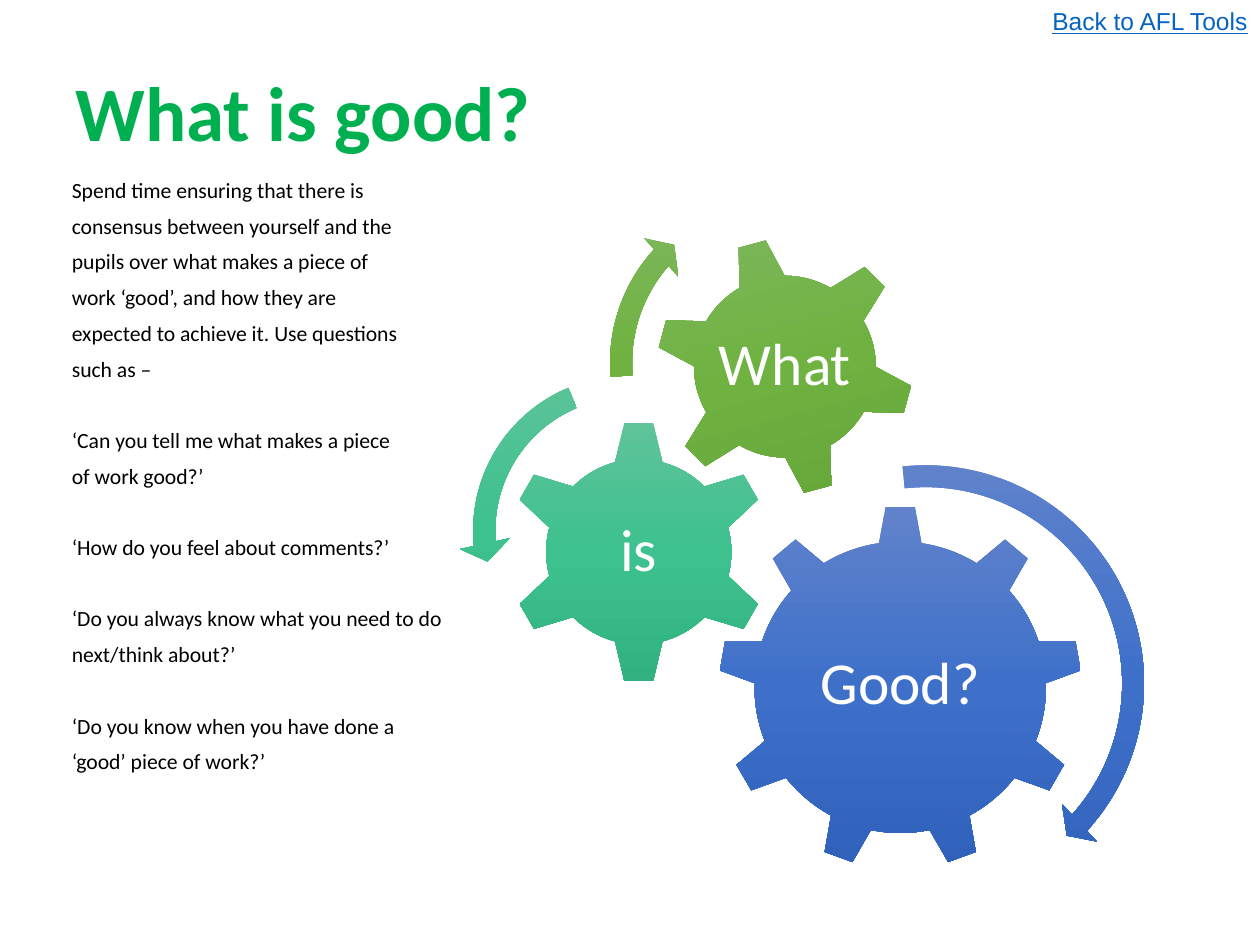
from copy import deepcopy
from pptx import Presentation
from pptx import util as u
from pptx.dml.color import RGBColor
from pptx.enum import shapes, text

HUES = {
    "title": "00B050", "body": "000000", "link": "0563C1", "label": "FFFFFF",
    "blue": ("6183CB", "3E70CA", "3062BB"),
    "teal": ("60C39A", "3DC18F", "31B080"),
    "green": ("81B861", "6FB242", "62A336"),
}
KIND = shapes.MSO_SHAPE
ALIGN = text.PP_ALIGN
NOTES = (
    ("Spend time ensuring that there is", "consensus between yourself and the",
     "pupils over what makes a piece of", "work ‘good’, and how they are",
     "expected to achieve it. Use questions", "such as –"),
    ("‘Can you tell me what makes a piece", "of work good?’"),
    ("‘How do you feel about comments?’",),
    ("‘Do you always know what you need to do", "next/think about?’"),
    ("‘Do you know when you have done a", "‘good’ piece of work?’"),
)
GEARS = (
    ("Good?", KIND.GEAR_9, "blue", (5.7, 4.01, 2.89, 2.89), 0, (0.2, 0.24, 0.6, 0.51),
     KIND.CIRCULAR_ARROW, (-0.07, -0.15, 1.28, 1.28), (0.047, 2.99, 25.29, 158.34, 0.055)),
    ("is", KIND.GEAR_6, "teal", (4.02, 3.33, 2.1, 2.1), 0, (0.25, 0.25, 0.5, 0.5),
     KIND.LEFT_CIRCULAR_ARROW, (-0.18, -0.22, 1.28, 1.28), (0.065, 4.3, 104.89, 148.38, 0.075)),
    ("What", KIND.GEAR_6, "green", (5.2, 1.88, 2.06, 2.06), 345, (0.22, 0.22, 0.56, 0.56),
     KIND.CIRCULAR_ARROW, (-0.23, -0.22, 1.41, 1.41), (0.06, 3.94, 133.14, 105.08, 0.07)),
)


def inner(box, share):
    """Return the part of a box given by shares of its size."""
    x, y, w, h = box
    a, b, c, d = share
    return x + a * w, y + b * h, c * w, d * h


def inch(box):
    """Turn a box in inches into lengths."""
    return [u.Inches(v) for v in box]


def style(para, size, hue, face="Calibri", align=ALIGN.LEFT):
    """Format a paragraph and its runs."""
    para.alignment = align
    for run in para.runs:
        run.font.size = u.Pt(size)
        run.font.name = face
        run.font.color.rgb = RGBColor.from_string(HUES[hue])


def seat(holder, box):
    """Move a placeholder to a box and stop it resizing."""
    holder.left, holder.top, holder.width, holder.height = inch(box)
    holder.text_frame.auto_size = text.MSO_AUTO_SIZE.NONE
    holder.text_frame.word_wrap = True


def head(slide, box):
    """Fill the title."""
    title = slide.shapes.title
    seat(title, box)
    title.text_frame.text = "What is good?"
    title.text_frame.vertical_anchor = text.MSO_ANCHOR.MIDDLE
    para = title.text_frame.paragraphs[0]
    para.line_spacing = 0.9
    style(para, 44, "title")
    para.runs[0].font.bold = True


def body(slide, box):
    """Fill the body with groups of lines set apart by spacing."""
    holder = slide.placeholders[1]
    seat(holder, box)
    frame = holder.text_frame
    frame.text = "\n".join(line for group in NOTES for line in group)
    starts = {group[0] for group in NOTES[1:]}
    for para in frame.paragraphs:
        para.line_spacing = 0.7
        para.space_before = u.Pt(30.4 if para.text in starts else 10)
        style(para, 12.4, "body")
        props = para._p.get_or_add_pPr()
        props.set("marL", str(u.Inches(0.25)))
        props.set("indent", str(u.Inches(-0.25)))
        props.insert_element_before(
            props.makeelement("{http://schemas.openxmlformats.org/drawingml/2006/main}buNone", {}),
            "a:tabLst", "a:defRPr", "a:extLst")


def back(slide, box):
    """Add the underlined line in the top corner."""
    frame = slide.shapes.add_textbox(*inch(box)).text_frame
    frame.word_wrap = True
    frame.text = "Back to AFL Tools"
    para = frame.paragraphs[0]
    style(para, 14, "link", "Arial", ALIGN.RIGHT)
    para.runs[0].font.underline = True


def solid(slide, kind, box, hue):
    """Add a shape shaded downwards in three tones."""
    shape = slide.shapes.add_shape(kind, *inch(box))
    shape.shadow.inherit = False
    shape.line.fill.background()
    shape.fill.gradient()
    shape.fill.gradient_angle = 270
    last = shape._element.spPr.xpath(".//a:gs")[-1]
    last.addprevious(deepcopy(last))
    for stop, tone, spot in zip(shape.fill.gradient_stops, HUES[hue], (0, 0.5, 1)):
        stop.color.rgb = RGBColor.from_string(tone)
        stop.position = spot
    return shape


def gear(slide, box, word, kind, hue, turn, label, arrow, sweep, bends):
    """Add a gear with its word and the arrow around it."""
    solid(slide, kind, box, hue).rotation = turn
    frame = slide.shapes.add_textbox(*inch(inner(box, label))).text_frame
    frame.margin_left = frame.margin_right = u.Inches(0.05)
    frame.margin_top = frame.margin_bottom = u.Inches(0.05)
    frame.word_wrap = True
    frame.vertical_anchor = text.MSO_ANCHOR.MIDDLE
    frame.text = word
    frame.paragraphs[0].line_spacing = 0.9
    style(frame.paragraphs[0], 34, "label", align=ALIGN.CENTER)
    curve = solid(slide, arrow, inner(box, sweep), hue)
    for i, bend in enumerate(bends):
        curve.adjustments[i] = bend


def main():
    """Build the slide and save it."""
    deck = Presentation()
    deck.slide_width, deck.slide_height = u.Inches(10), u.Inches(7.5)
    slide = deck.slides.add_slide(deck.slide_layouts[1])
    head(slide, (0.5, 0.3, 9, 1.25))
    body(slide, (0.47, 1.41, 4.42, 4.95))
    back(slide, (7.97, 0, 2.03, 0.34))
    for word, kind, hue, box, turn, label, arrow, sweep, bends in GEARS:
        gear(slide, box, word, kind, hue, turn, label, arrow, sweep, bends)
    deck.save("out.pptx")


if __name__ == "__main__":
    main()
